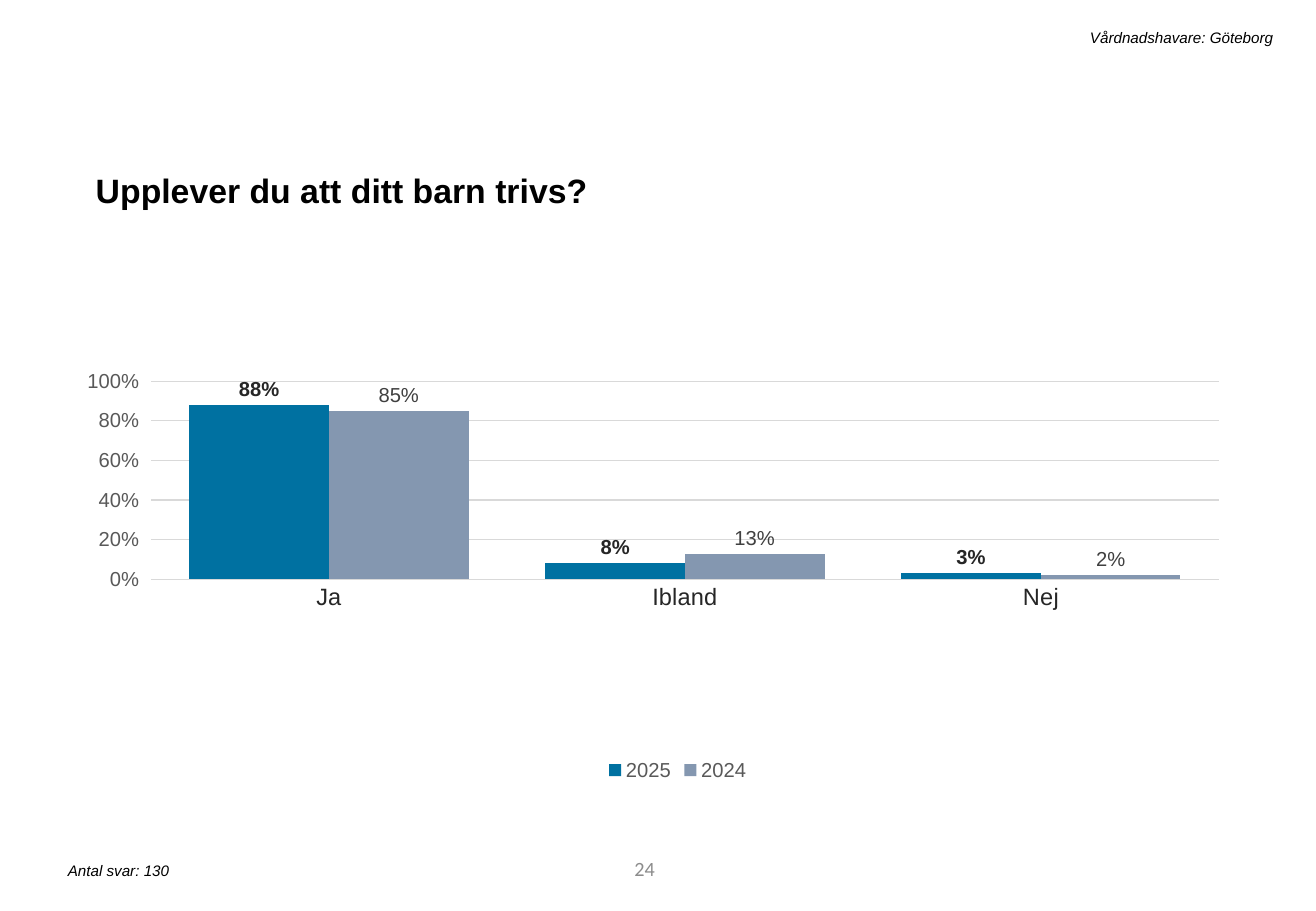
"""Build a survey slide with a clustered column chart comparing 2025 and 2024."""
import pptx
import pptx.chart.data
import pptx.dml.color
import pptx.enum.chart
import pptx.enum.text
import pptx.oxml
import pptx.util

Pt = pptx.util.Pt
ALIGN = pptx.enum.text.PP_ALIGN
ANCHOR = pptx.enum.text.MSO_ANCHOR
CHART = pptx.enum.chart
CHART_NAMESPACE = "http://schemas.openxmlformats.org/drawingml/2006/chart"


def set_font(font, color, **format_values):
    font.color.rgb = pptx.dml.color.RGBColor.from_string(color)
    for name, value in format_values.items():
        setattr(font, name, value)


def set_layout(element, index, layout_values):
    for old_layout in element.findall(f"{{{CHART_NAMESPACE}}}layout"):
        element.remove(old_layout)
    items = "".join(f'<c:{name} val="{value}"/>' for name, value in layout_values.items())
    element.insert(index, pptx.oxml.parse_xml(
        f'<c:layout xmlns:c="{CHART_NAMESPACE}"><c:manualLayout>{items}</c:manualLayout></c:layout>'))


deck = pptx.Presentation()
deck.slide_width, deck.slide_height = Pt(780), Pt(540)
page = deck.slides.add_slide(deck.slide_layouts[6])

small_italic = {"name": "Arial", "size": Pt(9), "italic": True}
texts = [
    ("24", (219.6, 500.4, 175.7, 28.8), "8C8C8C", {"name": "Calibri", "size": Pt(12)},
     {"alignment": ALIGN.RIGHT}, ANCHOR.MIDDLE),
    ("Upplever du att ditt barn trivs?", (49.7, 92.2, 676.8, 33.8), "000000",
     {"name": "Arial", "size": Pt(20), "bold": True},
     {"line_spacing": 1.2, "space_before": Pt(10)}, ANCHOR.TOP),
    ("Antal svar: 130", (33.1, 506.9, 317.5, 18), "000000", small_italic, {}, ANCHOR.TOP),
    ("Vårdnadshavare: Göteborg", (123.8, 13, 637.9, 18), "000000", small_italic,
     {"alignment": ALIGN.RIGHT}, ANCHOR.TOP),
]
for text, place, color, font_values, para_values, anchor in texts:
    box = page.shapes.add_textbox(*map(Pt, place))
    box.text_frame.word_wrap = True
    box.text_frame.vertical_anchor = anchor
    para = box.text_frame.paragraphs[0]
    for name, value in para_values.items():
        setattr(para, name, value)
    span = para.add_run()
    span.text = text
    set_font(span.font, color, **font_values)

answers = pptx.chart.data.CategoryChartData(number_format="0%")
answers.categories = ["Ja", "Ibland", "Nej"]
answers.add_series("2025", (0.88, 0.08, 0.03))
answers.add_series("2024", (0.85, 0.13, 0.02))
chart = page.shapes.add_chart(
    CHART.XL_CHART_TYPE.COLUMN_CLUSTERED, Pt(51.8), Pt(182.2), Pt(676.8), Pt(284.4), answers).chart
chart.has_title = False
set_font(chart.font, "000000", name="Arial", size=Pt(10))

plot = chart.plots[0]
plot.gap_width = 55
plot.overlap = 0
plot.vary_by_categories = False
series_styles = [("0071A1", "262626", True), ("8497B0", "404040", False)]
for series, (fill_color, label_color, bold) in zip(plot.series, series_styles):
    series.format.fill.solid()
    series.format.fill.fore_color.rgb = pptx.dml.color.RGBColor.from_string(fill_color)
    labels = series.data_labels
    label_values = {"show_value": True, "number_format": "0%", "number_format_is_linked": False,
                    "position": CHART.XL_LABEL_POSITION.OUTSIDE_END}
    for name, value in label_values.items():
        setattr(labels, name, value)
    set_font(labels.font, label_color, name="Arial", size=Pt(12), bold=bold)

category_axis, value_axis = chart.category_axis, chart.value_axis
category_axis.major_tick_mark = CHART.XL_TICK_MARK.NONE
set_font(category_axis.tick_labels.font, "262626", name="Arial", size=Pt(14))

axis_values = {"minimum_scale": 0, "maximum_scale": 1, "major_unit": 0.2,
               "has_major_gridlines": True, "major_tick_mark": CHART.XL_TICK_MARK.OUTSIDE}
for name, value in axis_values.items():
    setattr(value_axis, name, value)
value_axis.format.line.fill.background()
value_axis.tick_labels.number_format = "0%"
value_axis.tick_labels.number_format_is_linked = False
set_font(value_axis.tick_labels.font, "595959", name="Arial", size=Pt(12))

for line in (category_axis.format.line, value_axis.major_gridlines.format.line):
    line.color.rgb = pptx.dml.color.RGBColor.from_string("D9D9D9")
    line.width = Pt(0.75)

chart.has_legend = True
legend = chart.legend
legend.position = CHART.XL_LEGEND_POSITION.BOTTOM
legend.include_in_layout = False
set_font(legend.font, "595959", name="Arial", size=Pt(12))

edges = {"xMode": "edge", "yMode": "edge"}
plot_area = chart.element.find(f".//{{{CHART_NAMESPACE}}}plotArea")
legend_element = chart.element.find(f".//{{{CHART_NAMESPACE}}}legend")
set_layout(plot_area, 0, {"layoutTarget": "inner", **edges, "x": 0.054, "y": 0.154, "w": 0.937, "h": 0.413})
set_layout(legend_element, 1, {**edges, "x": 0.45, "y": 0.94})

deck.save("out.pptx")
